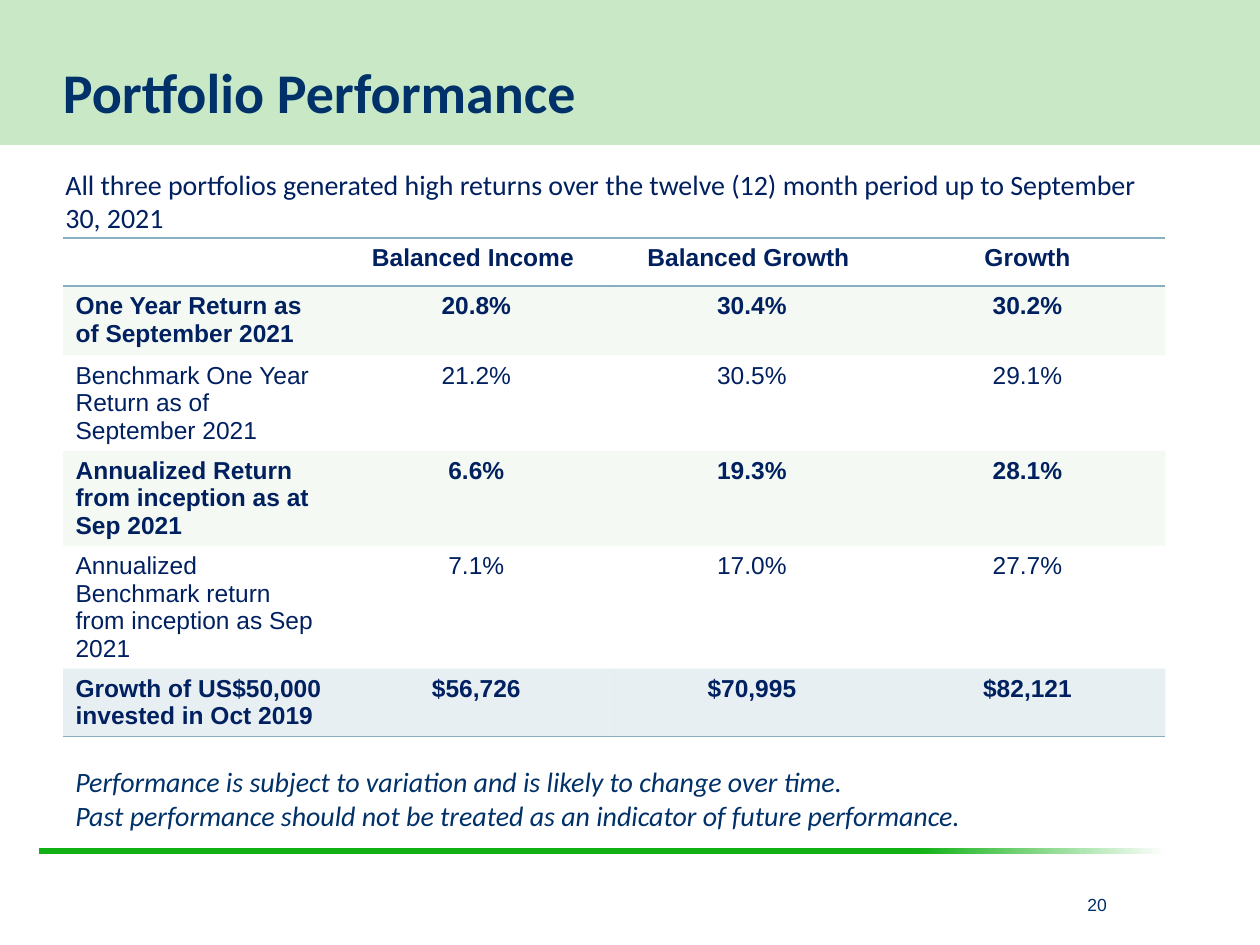
from dataclasses import dataclass, field

from lxml import etree
from pptx import Presentation
from pptx import util as u
from pptx.dml.color import RGBColor
from pptx.enum import shapes, text
from pptx.oxml import ns

NAVY = RGBColor(0x00, 0x20, 0x60)
BLUE = RGBColor(0x00, 0x31, 0x68)
MINT = RGBColor(0xC8, 0xE8, 0xC6)
STEEL = RGBColor(0x87, 0xAF, 0xBF)
GREEN = RGBColor(0x11, 0xB1, 0x15)
WHITE = RGBColor(0xFF, 0xFF, 0xFF)

LEFT, MID, RIGHT = text.PP_ALIGN.LEFT, text.PP_ALIGN.CENTER, text.PP_ALIGN.RIGHT
TOP, CENTRE = text.MSO_ANCHOR.TOP, text.MSO_ANCHOR.MIDDLE
PLAIN = "{2D5ABB26-0587-4C30-8999-92F81FD0307C}"  # table style without lines


@dataclass
class Note:
    box: tuple  # left, top, width, height in cm
    lines: list
    color: RGBColor
    font: dict = field(default_factory=dict)
    para: dict = field(default_factory=dict)
    tight: bool = False


@dataclass
class Row:
    high: float
    cells: list
    bold: bool = True
    tint: RGBColor | None = None
    edges: tuple = ()


NOTES = [
    Note((1.27, 1.35, 21.06, 1.14), ["Portfolio Performance"], BLUE,
         {"size": u.Pt(32), "bold": True}, {"line_spacing": 0.9}, True),
    Note((1.07, 3.25, 22.23, 2.39),
         ["All three portfolios generated high returns over the twelve (12) "
          "month period up to September 30, 2021"], NAVY),
    Note((1.27, 15.29, 22.17, 2.31),
         ["Performance is subject to variation and is likely to change over time.",
          "Past performance should not be treated as an indicator of future performance."],
         BLUE, {"italic": True}),
    Note((21.29, 17.98, 1.02, 0.51), ["20"], BLUE,
         {"size": u.Pt(10), "name": "Arial"}, {"alignment": RIGHT}, True),
]

ROWS = [
    Row(0.69, ["", "Balanced Income ", "Balanced Growth ", "Growth"],
        edges=("lnT", "lnB")),
    Row(1.4, ["One Year Return as of September 2021", "20.8%", "30.4%", "30.2%"],
        tint=MINT),
    Row(1.04, ["Benchmark One Year Return as of September 2021",
               "21.2%", "30.5%", "29.1%"], bold=False),
    Row(1.22, ["Annualized Return from inception as at Sep 2021",
               "6.6%", "19.3%", "28.1%"], tint=MINT),
    Row(1.22, ["Annualized Benchmark return from inception as Sep 2021",
               "7.1%", "17.0%", "27.7%"], bold=False),
    Row(1.22, ["Growth of US$50,000 invested in Oct 2019",
               "$56,726", "$70,995", "$82,121"], tint=STEEL, edges=("lnB",)),
]


def style(item, values: dict) -> None:
    for name, value in values.items():
        setattr(item, name, value)


def node(up, tag: str, **attrs: str):
    return etree.SubElement(up, ns.qn(tag), **attrs)


def write(para, line: str, color: RGBColor, font: dict) -> None:
    run = para.add_run()
    run.text = line
    style(run.font, font)
    run.font.color.rgb = color


def bar(slide, box: tuple):
    shape = slide.shapes.add_shape(shapes.MSO_SHAPE.RECTANGLE, *map(u.Cm, box))
    shape.shadow.inherit = False
    shape.line.fill.background()
    return shape


def fade(shape, stops: list) -> None:
    shape.fill.gradient()
    shape.fill.gradient_angle = 0
    group = shape._element.spPr.find(".//" + ns.qn("a:gsLst"))
    for old in list(group):
        group.remove(old)
    for pos, color in stops:
        stop = node(group, "a:gs", pos=str(pos * 1000))
        node(stop, "a:srgbClr", val=str(color))


def place(slide, note: Note) -> None:
    frame = slide.shapes.add_textbox(*map(u.Cm, note.box)).text_frame
    frame.word_wrap = True
    frame.vertical_anchor = CENTRE if note.tight else TOP
    if note.tight:
        style(frame, {f"margin_{side}": 0 for side in ("left", "top", "right", "bottom")})
    for i, line in enumerate(note.lines):
        para = frame.add_paragraph() if i else frame.paragraphs[0]
        style(para, note.para)
        write(para, line, note.color, {"size": u.Pt(16), "name": "Calibri"} | note.font)


def paint(cell, row: Row) -> None:
    props = cell._tc.get_or_add_tcPr()
    for edge in row.edges:
        line = node(props, "a:" + edge, w=str(u.Pt(1)))
        node(node(line, "a:solidFill"), "a:srgbClr", val=str(STEEL))
    if row.tint is None:
        cell.fill.background()
        return
    cell.fill.solid()
    cell.fill.fore_color.rgb = row.tint
    node(props.find(".//" + ns.qn("a:solidFill") + "[last()]/" + ns.qn("a:srgbClr"))
         if not row.edges else props[-1][0], "a:alpha", val="20000")


def grid(slide, rows: list) -> None:
    size = len(rows), len(rows[0].cells)
    box = map(u.Cm, (1.27, 4.8, 22.22, 9.83))
    table = slide.shapes.add_table(*size, *box).table
    style(table, {"first_row": False, "horz_banding": False})
    table._tbl.tblPr.find(ns.qn("a:tableStyleId")).text = PLAIN
    for r, row in enumerate(rows):
        table.rows[r].height = u.Cm(row.high)
        for c, line in enumerate(row.cells):
            cell = table.cell(r, c)
            para = cell.text_frame.paragraphs[0]
            para.alignment = MID if c else LEFT
            write(para, line, NAVY, {"size": u.Pt(14), "name": "Arial", "bold": row.bold})
            paint(cell, row)


def main() -> None:
    deck = Presentation()
    style(deck, {"slide_width": u.Cm(25.4), "slide_height": u.Cm(19.05)})
    slide = deck.slides.add_slide(deck.slide_layouts[6])

    # Title band
    band = bar(slide, (0, -0.03, 25.45, 2.95))
    band.fill.solid()
    band.fill.fore_color.rgb = MINT

    # Returns table
    grid(slide, ROWS)

    # Footer rule
    rule = bar(slide, (0.78, 17.09, 23.93, 0.13))
    fade(rule, [(0, GREEN), (60, GREEN), (74, GREEN), (95, WHITE), (100, WHITE)])

    # Title, remarks and page number
    for note in NOTES:
        place(slide, note)

    deck.save("out.pptx")


if __name__ == "__main__":
    main()
